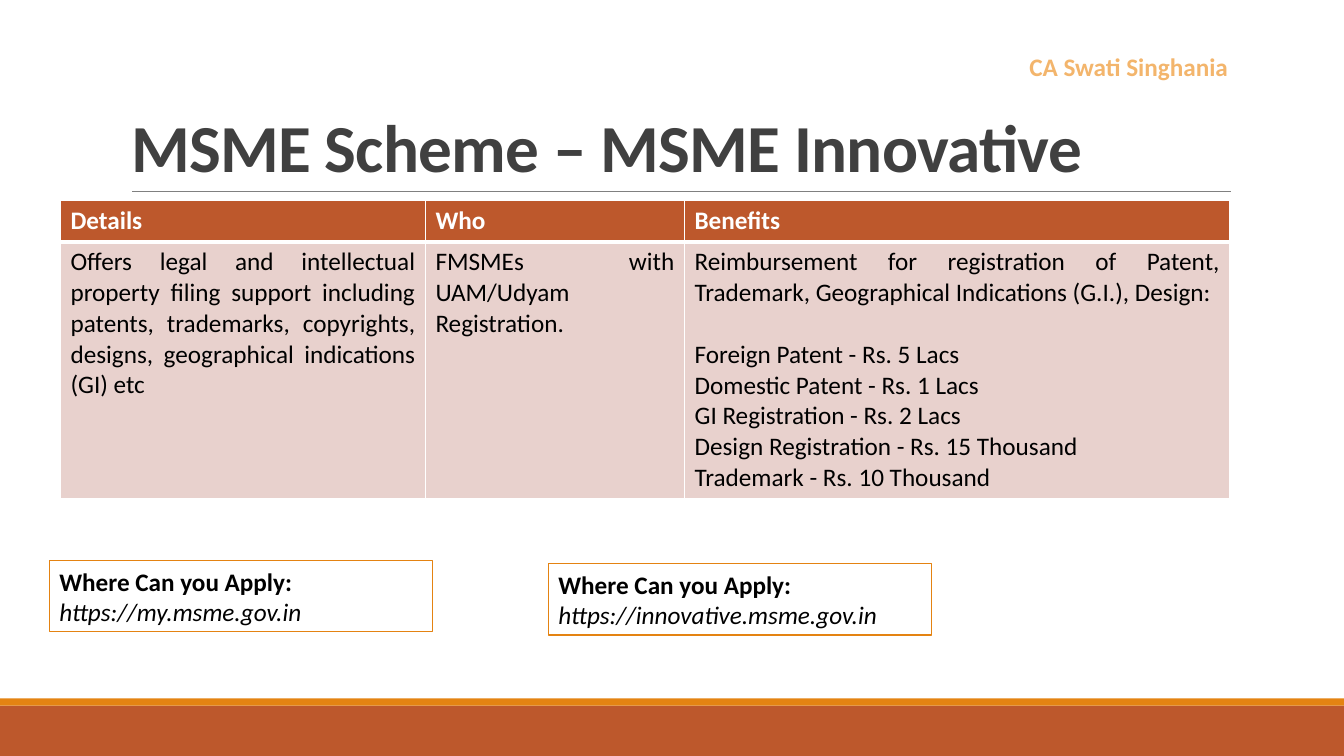
from pptx import Presentation
from pptx.dml.color import RGBColor
from pptx.enum.shapes import MSO_CONNECTOR as Conn, MSO_SHAPE as Shape
from pptx.enum.text import MSO_ANCHOR as Anchor, MSO_AUTO_SIZE as Auto, PP_ALIGN as Align
from pptx.oxml import parse_xml
from pptx.oxml.ns import nsdecls
from pptx.util import Inches, Pt

TITLE = "MSME Scheme – MSME Innovative"
AUTHOR = "CA Swati Singhania"
TABLE = [
    ("Details", 3.62, [
        "Offers legal and intellectual property filing support including patents, "
        "trademarks, copyrights, designs, geographical indications (GI) etc"]),
    ("Who", 2.57, ["FMSMEs with UAM/Udyam Registration."]),
    ("Benefits", 5.41, [
        "Reimbursement for registration of Patent, Trademark, "
        "Geographical Indications (G.I.), Design:",
        "Foreign Patent - Rs. 5 Lacs",
        "Domestic Patent - Rs. 1 Lacs",
        "GI Registration - Rs. 2 Lacs",
        "Design Registration - Rs. 15 Thousand",
        "Trademark - Rs. 10 Thousand"]),
]
APPLY = "Where Can you Apply:"
LINKS = [("https://my.msme.gov.in", 0.49, 5.56),
         ("https://innovative.msme.gov.in", 5.44, 5.59)]
RUST, ORANGE, PINK = "BD582C", "E48312", "E8D1CD"
WHITE, BLACK = "FFFFFF", "000000"
WIDE, HIGH = 13.33, 7.5
ROWS = (0.41, 2.54)
GAP = Pt(22)


def rgb(code):
    """Turn a hex string into a colour."""
    return RGBColor.from_string(code)


def place(left, top, width, height):
    """Give a box in inches."""
    return [Inches(v) for v in (left, top, width, height)]


def style(para, color=BLACK, bold=False, italic=False, size=18):
    """Set the font of one paragraph."""
    font = para.font
    font.name, font.size = "Calibri", Pt(size)
    font.bold, font.italic = bold, italic
    font.color.rgb = rgb(color)


def write(frame, lines, **look):
    """Fill a text frame with one paragraph per line and return them."""
    frame.text = "\n".join(lines)
    for para in frame.paragraphs:
        style(para, **look)
    return frame.paragraphs


def box(where, fill=None, line=None):
    """Add a rectangle with an optional fill and outline."""
    shape = slide.shapes.add_shape(Shape.RECTANGLE, *place(*where))
    shape.shadow.inherit = False
    for part, color in ((shape.fill, fill), (shape.line.fill, line)):
        if color:
            part.solid()
            part.fore_color.rgb = rgb(color)
        else:
            part.background()
    return shape


def edge(cell, base):
    """Draw white cell borders; base is the width of the lower one."""
    for i, (side, width) in enumerate(zip("LRTB", (1, 1, 1, base))):
        cell._tc.get_or_add_tcPr().insert(i, parse_xml(
            f'<a:ln{side} {nsdecls("a")} w="{Pt(width)}"><a:solidFill>'
            f'<a:srgbClr val="{WHITE}"/></a:solidFill></a:ln{side}>'))


deck = Presentation()
deck.slide_width, deck.slide_height = Inches(WIDE), Inches(HIGH)
slide = deck.slides.add_slide(deck.slide_layouts[5])

# Footer bands and title rule
box((0, 7, WIDE, 0.5), RUST)
box((0, 6.93, WIDE, 0.07), ORANGE)
rule = slide.shapes.add_connector(
    Conn.STRAIGHT, *place(1.31, 1.9, 12.21, 1.9))
rule.line.color.rgb, rule.line.width = rgb("808080"), Pt(0.5)
rule._element.spPr.append(parse_xml(f'<a:effectLst {nsdecls("a")}/>'))

# Title
title = slide.shapes.title
title.left, title.top, title.width, title.height = place(1.2, 0.31, 11, 1.59)
head = title.text_frame
head.auto_size, head.vertical_anchor = Auto.NONE, Anchor.BOTTOM
para = write(head, [TITLE], color="404040", bold=True, size=48)[0]
para.alignment, para.line_spacing = Align.LEFT, 0.85
para.runs[0].font._element.set("spc", "-50")

# Scheme table
width = sum(col[1] for col in TABLE)
grid = slide.shapes.add_table(
    2, len(TABLE), *place(0.6, 1.99, width, sum(ROWS))).table
for row, height in zip(grid.rows, ROWS):
    row.height = Inches(height)
for c, (name, width, lines) in enumerate(TABLE):
    grid.columns[c].width = Inches(width)
    top, body = grid.cell(0, c), grid.cell(1, c)
    write(top.text_frame, [name], color=WHITE, bold=True)
    paras = write(body.text_frame, lines)
    for para in paras:
        para.alignment = Align.JUSTIFY
    if len(paras) > 1:
        paras[1].space_before = GAP
    for cell, fill, base in ((top, RUST, 3), (body, PINK, 1)):
        cell.fill.solid()
        cell.fill.fore_color.rgb = rgb(fill)
        edge(cell, base)

# Application links
for link, left, top in LINKS:
    card = box((left, top, 3.8, 0.71), line=ORANGE)
    card.line.width = Pt(0.75)
    card.text_frame.word_wrap = True
    label, address = write(card.text_frame, [APPLY, link])
    style(label, bold=True)
    style(address, italic=True)
    label.alignment = address.alignment = Align.LEFT

# Author
note = slide.shapes.add_textbox(*place(10.11, 0.46, 2.29, 0.4)).text_frame
note.word_wrap = True
write(note, [AUTHOR], color="F3B56C", bold=True)

deck.save("out.pptx")
